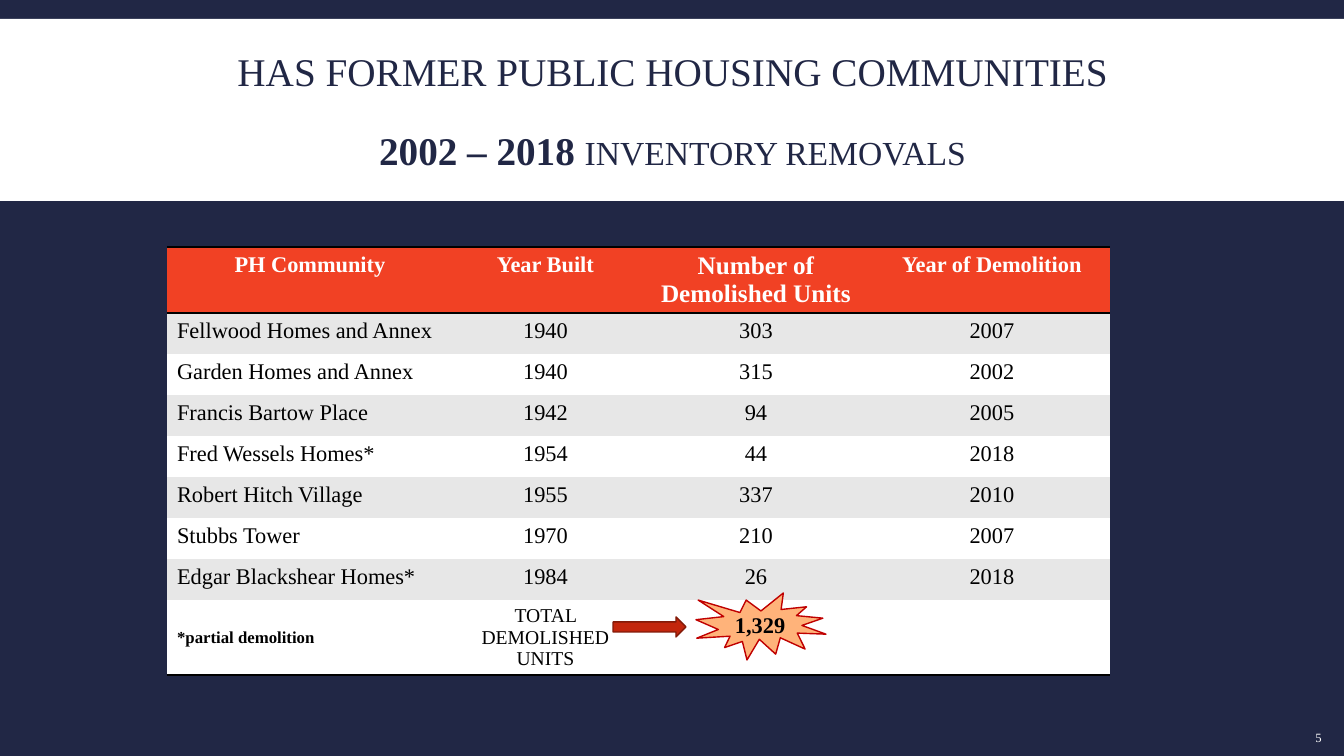
"""Build the slide on former public housing communities and their demolished units."""
import pptx
import pptx.dml.color
import pptx.enum.shapes
import pptx.enum.text
import pptx.oxml
import pptx.oxml.ns
import pptx.util

PX = 914400 / 100.8
SERIF = "Times New Roman"
NAVY, WHITE, BLACK, ORANGE, GREY = "212745", "FFFFFF", "000000", "F14124", "E7E7E7"
ALIGN = pptx.enum.text.PP_ALIGN
ANCHOR = pptx.enum.text.MSO_ANCHOR
PRESET = pptx.enum.shapes.MSO_SHAPE
PLAIN_TABLE_STYLE = "{2D5ABB26-0587-4C30-8999-92F81FD0307C}"

COLUMN_WIDTHS = (286, 185, 236, 236)
HEADER_HEIGHT, ROW_HEIGHT, TOTAL_HEIGHT = 66, 41, 75
HEADINGS = ("PH Community", "Year Built", "Number of Demolished Units", "Year of Demolition")
COMMUNITIES = (
    ("Fellwood Homes and Annex", "1940", "303", "2007"),
    ("Garden Homes and Annex", "1940", "315", "2002"),
    ("Francis Bartow Place", "1942", "94", "2005"),
    ("Fred Wessels Homes*", "1954", "44", "2018"),
    ("Robert Hitch Village", "1955", "337", "2010"),
    ("Stubbs Tower", "1970", "210", "2007"),
    ("Edgar Blackshear Homes*", "1984", "26", "2018"),
)
TOTALS = ("*partial demolition", "TOTAL DEMOLISHED UNITS", "", "")


def px(*lengths):
    """Turn pixel lengths into EMU."""
    return [pptx.util.Emu(round(length * PX)) for length in lengths]


def color(hex_string):
    """Turn a hex string into a colour."""
    return pptx.dml.color.RGBColor.from_string(hex_string)


def apply(target, **values):
    """Set every given attribute on the target."""
    for name, value in values.items():
        setattr(target, name, value)


def paint(fill, hex_string):
    """Make a fill solid in one colour."""
    fill.solid()
    fill.fore_color.rgb = color(hex_string)


def write(paragraph, words, size, ink, bold=False, align=ALIGN.CENTER):
    """Add one formatted run to a paragraph."""
    paragraph.alignment = align
    run = paragraph.add_run()
    run.text = words
    apply(run.font, name=SERIF, size=pptx.util.Pt(size), bold=bold)
    run.font.color.rgb = color(ink)


def add_preset(slide, preset, box, fill, outline=None):
    """Add a flat preset shape with an optional thin outline."""
    shape = slide.shapes.add_shape(preset, *px(*box))
    shape.shadow.inherit = False
    paint(shape.fill, fill)
    if outline:
        paint(shape.line.fill, outline)
        shape.line.width = pptx.util.Pt(1)
    else:
        shape.line.fill.background()
    return shape


def add_title(slide):
    """Fill the title placeholder with its two lines."""
    title = slide.shapes.title
    apply(title, **dict(zip(("left", "top", "width", "height"), px(133, 31, 1079, 166))))
    frame = title.text_frame
    apply(frame, vertical_anchor=ANCHOR.MIDDLE, auto_size=pptx.enum.text.MSO_AUTO_SIZE.NONE)
    heading, period = frame.paragraphs[0], frame.add_paragraph()
    write(heading, "HAS FORMER PUBLIC HOUSING COMMUNITIES", 28, NAVY)
    write(period, "2002 – 2018 ", 28, NAVY, bold=True)
    write(period, "INVENTORY REMOVALS", 24, NAVY)
    for line in frame.paragraphs:
        line.line_spacing = 0.85
    period.space_before = pptx.util.Pt(28)


def rule(cell, *sides):
    """Draw black 2 pt borders on the given sides of a cell."""
    for position, side in enumerate(sides):
        border = pptx.oxml.parse_xml(
            f'<a:{side} {pptx.oxml.ns.nsdecls("a")} w="25400"><a:solidFill>'
            f'<a:srgbClr val="{BLACK}"/></a:solidFill></a:{side}>')
        cell._tc.get_or_add_tcPr().insert(position, border)


def fill_cell(cell, words, background, size, ink=BLACK, bold=False, align=ALIGN.CENTER):
    """Paint a table cell and write its words."""
    paint(cell.fill, background)
    if words:
        write(cell.text_frame.paragraphs[0], words, size, ink, bold, align)


def add_removals_table(slide):
    """Add the table of communities with header and total rows."""
    heights = [HEADER_HEIGHT] + [ROW_HEIGHT] * len(COMMUNITIES) + [TOTAL_HEIGHT]
    frame = slide.shapes.add_table(len(heights), len(COLUMN_WIDTHS),
                                   *px(167, 247, sum(COLUMN_WIDTHS), sum(heights)))
    table = frame.table
    apply(table, first_row=False, horz_banding=False)
    table._tbl.tblPr.find(pptx.oxml.ns.qn("a:tableStyleId")).text = PLAIN_TABLE_STYLE
    for column, width in zip(table.columns, px(*COLUMN_WIDTHS)):
        column.width = width
    for row, height in zip(table.rows, px(*heights)):
        row.height = height

    last = len(heights) - 1
    for c, heading in enumerate(HEADINGS):
        fill_cell(table.cell(0, c), heading, ORANGE, 18 if c == 2 else 16, WHITE, bold=True)
        rule(table.cell(0, c), "lnT", "lnB")
        align = ALIGN.CENTER if c else ALIGN.LEFT
        for r, community in enumerate(COMMUNITIES, 1):
            fill_cell(table.cell(r, c), community[c], GREY if r % 2 else WHITE, 16, align=align)
        total = table.cell(last, c)
        fill_cell(total, TOTALS[c], WHITE, 14 if c else 12, bold=c == 0, align=align)
        total.vertical_anchor = ANCHOR.MIDDLE
        rule(total, "lnB")


def add_label(shape, words, size, ink, bold=False):
    """Centre one unwrapped line of text in a shape."""
    apply(shape.text_frame, word_wrap=False, vertical_anchor=ANCHOR.MIDDLE,
          margin_left=0, margin_right=0, margin_top=0, margin_bottom=0)
    write(shape.text_frame.paragraphs[0], words, size, ink, bold)


def main():
    """Assemble and save the slide."""
    deck = pptx.Presentation()
    deck.slide_width, deck.slide_height = px(1344, 756)
    slide = deck.slides.add_slide(deck.slide_layouts[5])
    paint(slide.background.fill, NAVY)
    band = add_preset(slide, PRESET.RECTANGLE, (0, 19, 1344, 182), WHITE)
    slide.shapes._spTree.insert(2, band._element)
    add_title(slide)
    add_removals_table(slide)
    total_burst = add_preset(slide, PRESET.EXPLOSION1, (696, 593, 130, 67), "FFB37A", "C00000")
    add_label(total_burst, "1,329", 16, BLACK, bold=True)
    add_preset(slide, PRESET.RIGHT_ARROW, (613, 617, 73, 20), "C3260C", "821A08")
    page_number = slide.shapes.add_textbox(*px(1308, 724, 21, 26))
    add_label(page_number, "5", 9, WHITE)
    deck.save("out.pptx")


if __name__ == "__main__":
    main()
